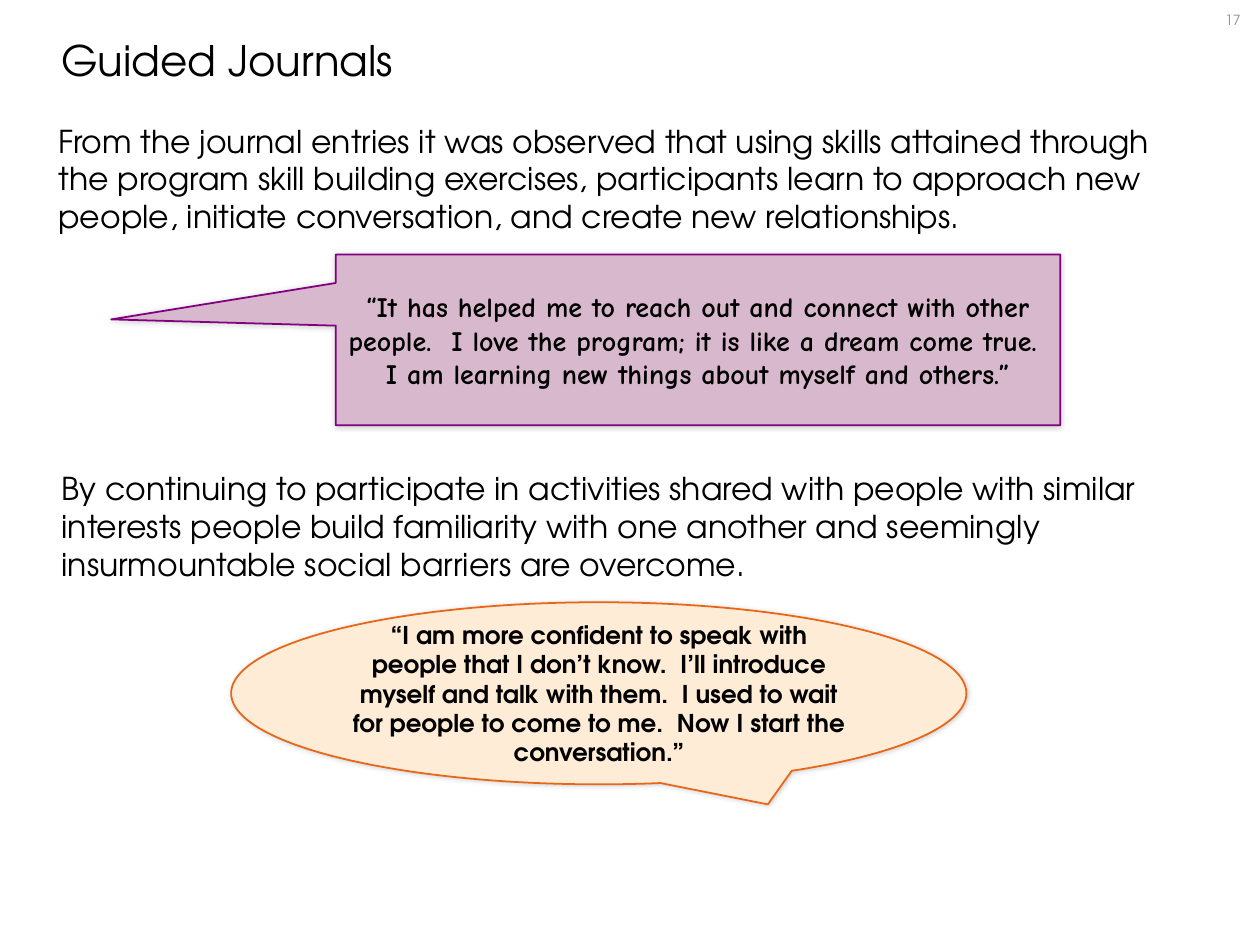
from lxml.etree import SubElement
from pptx import Presentation
from pptx.dml.color import RGBColor
from pptx.enum.shapes import MSO_SHAPE
from pptx.enum.text import MSO_ANCHOR, MSO_AUTO_SIZE, PP_ALIGN
from pptx.oxml.ns import qn
from pptx.util import Inches, Pt

BLACK = RGBColor(0x00, 0x00, 0x00)
GREY = RGBColor(0x8C, 0x8C, 0x8C)
PEACH = RGBColor(0xFF, 0xEC, 0xD7)
ORANGE = RGBColor(0xE7, 0x66, 0x18)
MAUVE = RGBColor(0xD8, 0xB8, 0xCD)
PURPLE = RGBColor(0x80, 0x00, 0x80)

BODY_FONT = "TeX Gyre Adventor"
QUOTE_FONT = "Comic Neue"

SKILLS_FINDING = (
    "From the journal entries it was observed that using skills attained through "
    "the program skill building exercises, participants learn to approach new "
    "people, initiate conversation, and create new relationships."
)
FAMILIARITY_FINDING = (
    "By continuing to participate in activities shared with people with similar "
    "interests people build familiarity with one another and seemingly "
    "insurmountable social barriers are overcome."
)
CONFIDENCE_QUOTE = (
    "“I am more confident to speak with people that I don’t know.  I’ll introduce "
    "myself and talk with them.  I used to wait for people to come to me.  "
    "Now I start the conversation.”"
)
CONNECTION_QUOTE = (
    "“It has helped me to reach out and connect with other people.  I love the "
    "program; it is like a dream come true.  I am learning new things about "
    "myself and others.”"
)


def write(shape, text, size, font=BODY_FONT, color=BLACK, bold=False,
          align=PP_ALIGN.LEFT, anchor=MSO_ANCHOR.TOP):
    frame = shape.text_frame
    frame.word_wrap = True
    frame.auto_size = MSO_AUTO_SIZE.NONE
    frame.vertical_anchor = anchor
    paragraph = frame.paragraphs[0]
    paragraph.text = text
    paragraph.alignment = align
    paragraph.font.name = font
    paragraph.font.size = Pt(size)
    paragraph.font.bold = bold
    paragraph.font.color.rgb = color


def add_title(slide, text):
    title = slide.shapes.title
    title.left, title.top = Inches(0.87), Inches(0.5)
    title.width, title.height = Inches(18.58), Inches(0.91)
    write(title, text, 48)


def add_text(slide, box, text, size, **style):
    write(slide.shapes.add_textbox(*map(Inches, box)), text, size, **style)


def add_soft_shadow(shape, distance, angle):
    shape.shadow.inherit = False
    effects = shape._element.spPr.find(qn("a:effectLst"))
    shadow = SubElement(effects, qn("a:outerShdw"), blurRad=str(Pt(6)),
                        dist=str(Pt(distance)), dir=str(angle * 60000),
                        rotWithShape="0")
    black = SubElement(shadow, qn("a:srgbClr"), val="000000")
    SubElement(black, qn("a:alpha"), val="20000")


def add_quote(slide, kind, box, tip, fill, outline, shadow, text, size, font):
    """Add a callout whose tip is an offset from its centre, in shares of its size."""
    callout = slide.shapes.add_shape(kind, *map(Inches, box))
    callout.adjustments[0], callout.adjustments[1] = tip
    callout.fill.solid()
    callout.fill.fore_color.rgb = fill
    callout.line.color.rgb = outline
    callout.line.width = Pt(2)
    add_soft_shadow(callout, *shadow)
    write(callout, text, size, font, bold=True,
          align=PP_ALIGN.CENTER, anchor=MSO_ANCHOR.MIDDLE)


def main():
    presentation = Presentation()
    presentation.slide_width = Inches(20)
    presentation.slide_height = Inches(15)
    slide = presentation.slides.add_slide(presentation.slide_layouts[5])

    add_title(slide, "Guided Journals")
    add_text(slide, (19.14, 0, 0.86, 0.63), "17", 16, color=GREY,
             align=PP_ALIGN.CENTER, anchor=MSO_ANCHOR.MIDDLE)
    add_text(slide, (0.83, 1.88, 18.31, 1.92), SKILLS_FINDING, 36)
    add_text(slide, (0.88, 7.4, 17.67, 1.92), FAMILIARITY_FINDING, 36)
    add_quote(slide, MSO_SHAPE.OVAL_CALLOUT, (3.67, 9.56, 11.67, 2.89),
              (0.23, 0.61), PEACH, ORANGE, (0, 315),
              CONFIDENCE_QUOTE, 28, BODY_FONT)
    add_quote(slide, MSO_SHAPE.RECTANGULAR_CALLOUT, (5.33, 4.04, 11.5, 2.71),
              (-0.81, -0.12), MAUVE, PURPLE, (1, 135),
              CONNECTION_QUOTE, 32, QUOTE_FONT)

    presentation.save("out.pptx")


if __name__ == "__main__":
    main()
